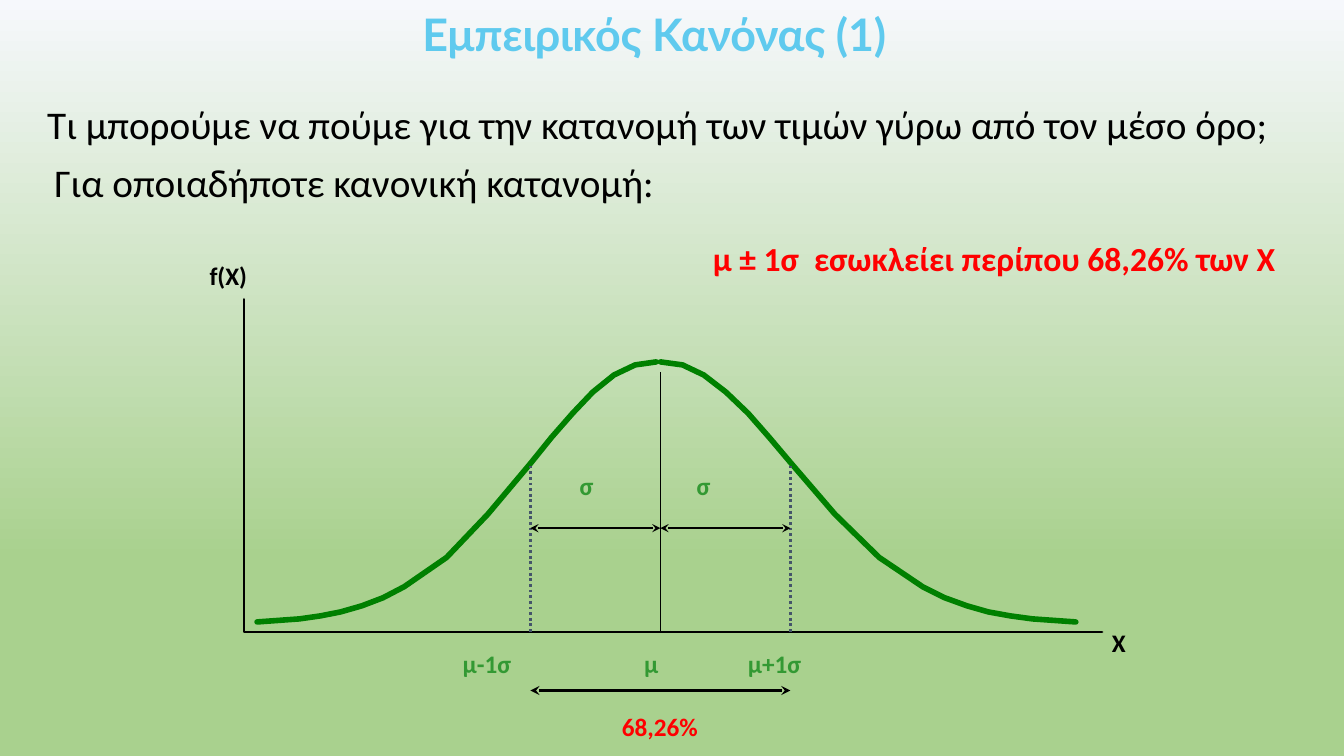
from pptx import Presentation
from pptx import util as u
from pptx.dml.color import RGBColor
from pptx.enum import dml, shapes, text
from pptx.oxml.ns import qn
from lxml import etree

COLORS = {
    "sky": "F6F8FC", "meadow": "A9D18E", "title": "5FCAEE", "red": "FF0000",
    "black": "000000", "curve": "008000", "label": "339933", "limit": "44546A",
}

presentation = Presentation()
presentation.slide_width = u.Inches(13.33)
presentation.slide_height = u.Inches(7.5)
slide = presentation.slides.add_slide(presentation.slide_layouts[1])

background = slide.background.fill
background.gradient()
background.gradient_angle = 270
for stop, (position, color) in zip(background.gradient_stops, [(0, "sky"), (0.74, "meadow")]):
    stop.position = position
    stop.color.rgb = RGBColor.from_string(COLORS[color])


def write(shape, box, words, size, color, bold=True, font="Calibri"):
    """Place a text shape and fill it with one formatted paragraph."""
    shape.left, shape.top, shape.width, shape.height = map(u.Inches, box)
    frame = shape.text_frame
    frame.text = words
    frame.word_wrap = True
    frame.auto_size = text.MSO_AUTO_SIZE.NONE
    run = frame.paragraphs[0].runs[0]
    run.font.size = u.Pt(size)
    run.font.name = font
    run.font.bold = bold
    run.font.color.rgb = RGBColor.from_string(COLORS[color])
    return frame


def draw_line(start, end, color, width, arrows=False, dotted=False):
    connector = slide.shapes.add_connector(
        shapes.MSO_CONNECTOR.STRAIGHT, *map(u.Inches, (*start, *end)))
    connector.line.color.rgb = RGBColor.from_string(COLORS[color])
    connector.line.width = u.Pt(width)
    if dotted:
        connector.line.dash_style = dml.MSO_LINE.ROUND_DOT
    if arrows:
        for tip in ("a:headEnd", "a:tailEnd"):
            etree.SubElement(connector.line._get_or_add_ln(), qn(tip), type="stealth")
    etree.SubElement(connector._element.spPr, qn("a:effectLst"))


# Title and statement
title = write(slide.shapes.title, (4.19, 0.11, 4.93, 0.5),
              "Εμπειρικός Κανόνας (1)", 32, "title", font="Lato")
title.margin_left = title.margin_right = title.margin_bottom = 0
title.margin_top = u.Inches(0.01)
title.vertical_anchor = text.MSO_ANCHOR.MIDDLE
title.paragraphs[0].alignment = text.PP_ALIGN.JUSTIFY
title.paragraphs[0].line_spacing = 0.9
title.paragraphs[0].runs[0].font._element.set("spc", "-20")

statement = write(slide.placeholders[1], (6.97, 2.36, 6.09, 0.53),
                  "μ ± 1σ  εσωκλείει περίπου 68,26% των X", 24, "red")
paragraph = statement.paragraphs[0]
paragraph.line_spacing = 0.9
properties = paragraph._p.get_or_add_pPr()
properties.set("marL", "0")
properties.set("indent", "0")
etree.SubElement(properties, qn("a:buNone"))

# Axes and the two halves of the bell curve, which share their heights
steps = [0, 2, 3, 4, 5, 6, 7, 9, 11, 13, 14, 15, 16, 17, 18, 19]
heights = [6.17, 6.14, 6.11, 6.07, 6.01, 5.93, 5.82, 5.53,
           5.1, 4.6, 4.34, 4.1, 3.89, 3.72, 3.62, 3.59]
outlines = [([(2.42, 2.97), (2.42, 6.27), (10.93, 6.27)], "black", 2)]
for tail, peak in [(10.67, 6.55), (2.55, 6.51)]:
    half = [(tail + (peak - tail) * step / steps[-1], y) for step, y in zip(steps, heights)]
    outlines.append((half, "curve", 4))
for points, color, width in outlines:
    hundredths = [(round(x * 100), round(y * 100)) for x, y in points]
    builder = slide.shapes.build_freeform(*hundredths[0], scale=u.Inches(0.01))
    builder.add_line_segments(hundredths[1:], close=False)
    outline = builder.convert_to_shape()
    outline.shadow.inherit = False
    outline.fill.background()
    outline.line.color.rgb = RGBColor.from_string(COLORS[color])
    outline.line.width = u.Pt(width)
    outline.line._get_or_add_ln().set("cap", "rnd")

# Mean, limits and distances
lower, mean, upper = 5.26, 6.55, 7.84
draw_line((mean, 3.69), (mean, 6.28), "black", 1)
for limit in (lower, upper):
    draw_line((limit, 4.62), (limit, 6.28), "limit", 2, dotted=True)
    draw_line((min(limit, mean), 5.24), (max(limit, mean), 5.24), "black", 1, arrows=True)
draw_line((lower, 6.85), (upper, 6.85), "black", 2.25, arrows=True)

# Sentences and labels
labels = [
    ((0.37, 0.95, 12.62, 0.57),
     "Τι μπορούμε να πούμε για την κατανομή των τιμών γύρω από τον μέσο όρο;", 28, "black", False),
    ((0.44, 1.52, 9.82, 0.57), "Για οποιαδήποτε κανονική κατανομή:", 28, "black", False),
    ((1.98, 2.53, 0.72, 0.42), "f(X)", 18, "black"),
    ((10.93, 6.17, 0.43, 0.42), "X", 18, "black"),
    ((4.49, 6.38, 1.55, 0.5), "μ-1σ", 18, "label"),
    ((6.29, 6.38, 0.81, 0.5), "μ", 18, "label"),
    ((7.32, 6.38, 1.8, 0.5), "μ+1σ", 18, "label"),
    ((5.65, 4.62, 0.52, 0.5), "σ", 18, "label"),
    ((6.81, 4.62, 0.52, 0.5), "σ", 18, "label"),
]
for box, *content in labels:
    write(slide.shapes.add_textbox(0, 0, 0, 0), box, *content)
share = write(slide.shapes.add_textbox(0, 0, 0, 0), (5.94, 7.01, 1.21, 0.42), "68,26%", 18, "red")
share.paragraphs[0].alignment = text.PP_ALIGN.CENTER

presentation.save("out.pptx")
